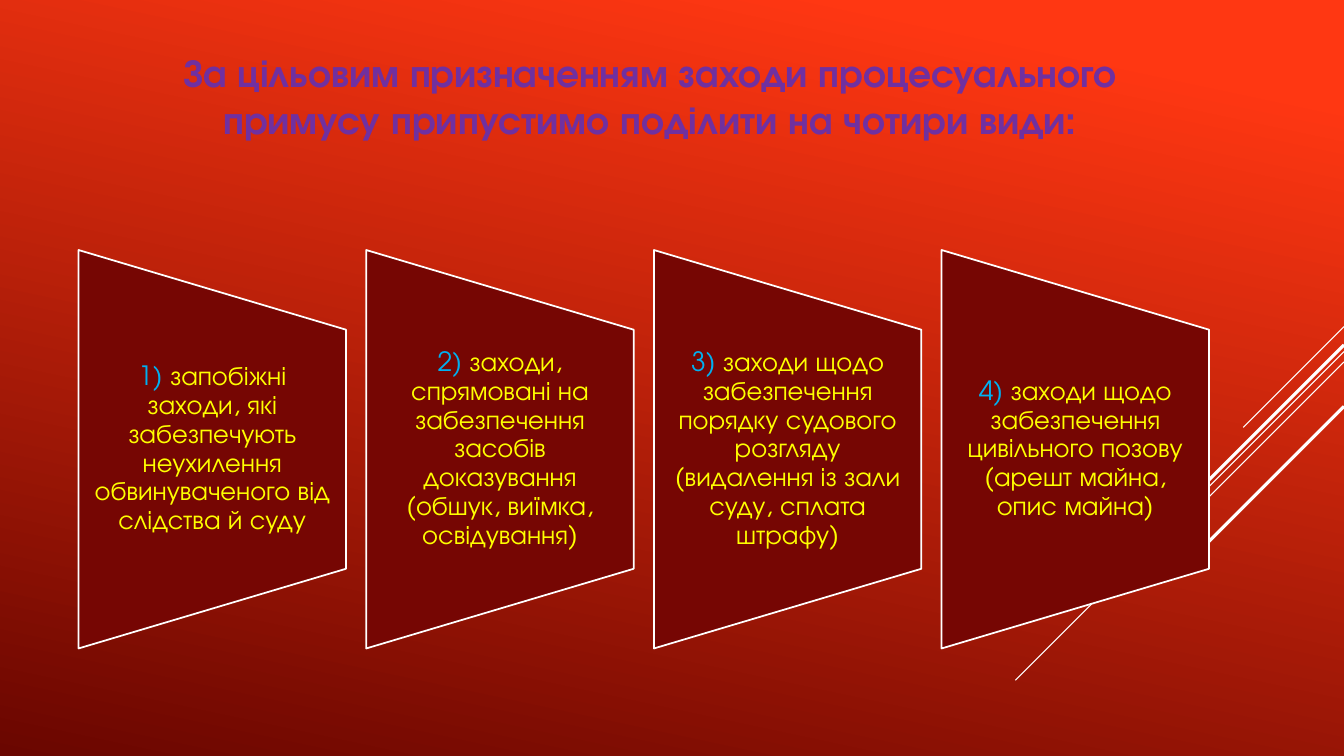
import pptx
import pptx.util
import pptx.dml.color
import pptx.enum.shapes
import pptx.enum.text
import pptx.oxml
import pptx.oxml.ns

Cm, Pt = pptx.util.Cm, pptx.util.Pt
FONT = "TeX Gyre Adventor"
SLIDE_W, SLIDE_H = 33.87, 19.05

TITLE = "За цільовим призначенням заходи процесуального примусу припустимо поділити на чотири види:"
MEASURES = [
    "запобіжні заходи, які забезпечують неухилення обвинуваченого від слідства й суду",
    "заходи, спрямовані на забезпечення засобів доказування (обшук, виїмка, освідування)",
    "заходи щодо забезпечення порядку судового розгляду (видалення із зали суду, сплата штрафу)",
    "заходи щодо забезпечення цивільного позову (арешт майна, опис майна)",
]
# Diagonals: start height on the right edge, extent, line width
DIAGONALS = [(8.23, 2.54, 0.75), (8.86, 8.28, 0.75), (9.12, 5.26, 0.75),
             (8.69, 4.85, 2.25), (10.24, 3.53, 2.25)]


def rgb(code):
    return pptx.dml.color.RGBColor.from_string(code)


def add_run(p, text, size, color, bold=False):
    r = p.add_run()
    r.text = text
    r.font.name, r.font.size, r.font.bold = FONT, Pt(size), bold
    r.font.color.rgb = rgb(color)


def set_background(s):
    fill = s.background.fill
    fill.gradient()
    fill.gradient_angle = 258
    for stop, (position, color) in zip(fill.gradient_stops, [(0.1, "FF3712"), (1, "6A0600")]):
        stop.position = position
        stop.color.rgb = rgb(color)


def add_diagonals(s, right):
    for top, extent, width in DIAGONALS:
        line = s.shapes.add_connector(
            pptx.enum.shapes.MSO_CONNECTOR.STRAIGHT,
            Cm(right), Cm(top), Cm(right - extent), Cm(top + extent))
        line.line.color.rgb = rgb("FFFFFF")
        line.line.width = Pt(width)
        line._element.spPr.append(pptx.oxml.parse_xml(
            "<a:effectLst %s/>" % pptx.oxml.ns.nsdecls("a")))


def add_title(s, left, top, width, height):
    sp = s.shapes.title
    sp.left, sp.top, sp.width, sp.height = Cm(left), Cm(top), Cm(width), Cm(height)
    tf = sp.text_frame
    tf.word_wrap = True
    tf.auto_size = pptx.enum.text.MSO_AUTO_SIZE.NONE
    tf.vertical_anchor = pptx.enum.text.MSO_ANCHOR.TOP
    p = tf.paragraphs[0]
    p.alignment = pptx.enum.text.PP_ALIGN.CENTER
    add_run(p, TITLE, 28, "7030A0", bold=True)


def add_measure(s, number, text, left, top, width, height):
    # Trapezoid turned on its side, so its own width is the box height
    shift = (height - width) / 2
    sp = s.shapes.add_shape(
        pptx.enum.shapes.MSO_SHAPE.FLOWCHART_MANUAL_OPERATION,
        Cm(left - shift), Cm(top + shift), Cm(height), Cm(width))
    sp.rotation = 270
    sp.shadow.inherit = False
    sp.fill.solid()
    sp.fill.fore_color.rgb = rgb("760603")
    sp.line.color.rgb = rgb("FFFFFF")
    sp.line.width = Pt(1.25)

    # Upright label in the middle three fifths
    label = s.shapes.add_textbox(
        Cm(left), Cm(top + height / 5), Cm(width), Cm(height * 3 / 5))
    tf = label.text_frame
    tf.word_wrap = True
    tf.vertical_anchor = pptx.enum.text.MSO_ANCHOR.MIDDLE
    tf.margin_left = tf.margin_right = Cm(0.33)
    tf.margin_top = tf.margin_bottom = 0
    p = tf.paragraphs[0]
    p.alignment = pptx.enum.text.PP_ALIGN.CENTER
    p.line_spacing = 0.9
    add_run(p, f"{number})", 19, "00B0F0")
    add_run(p, " " + text, 19, "FFFF00")


def add_measures(s, left, top, width, height, gap=0.51):
    column = (width - gap * (len(MEASURES) - 1)) / len(MEASURES)
    for i, text in enumerate(MEASURES):
        add_measure(s, i + 1, text, left + i * (column + gap), top, column, height)


def main():
    prs = pptx.Presentation()
    prs.slide_width, prs.slide_height = Cm(SLIDE_W), Cm(SLIDE_H)
    s = prs.slides.add_slide(prs.slide_layouts[5])
    set_background(s)
    add_diagonals(s, SLIDE_W)
    add_measures(s, 1.98, 6.3, 28.49, 10.04)
    add_title(s, 4.17, 1.09, 24.43, 3.84)
    prs.save("out.pptx")


if __name__ == "__main__":
    main()
